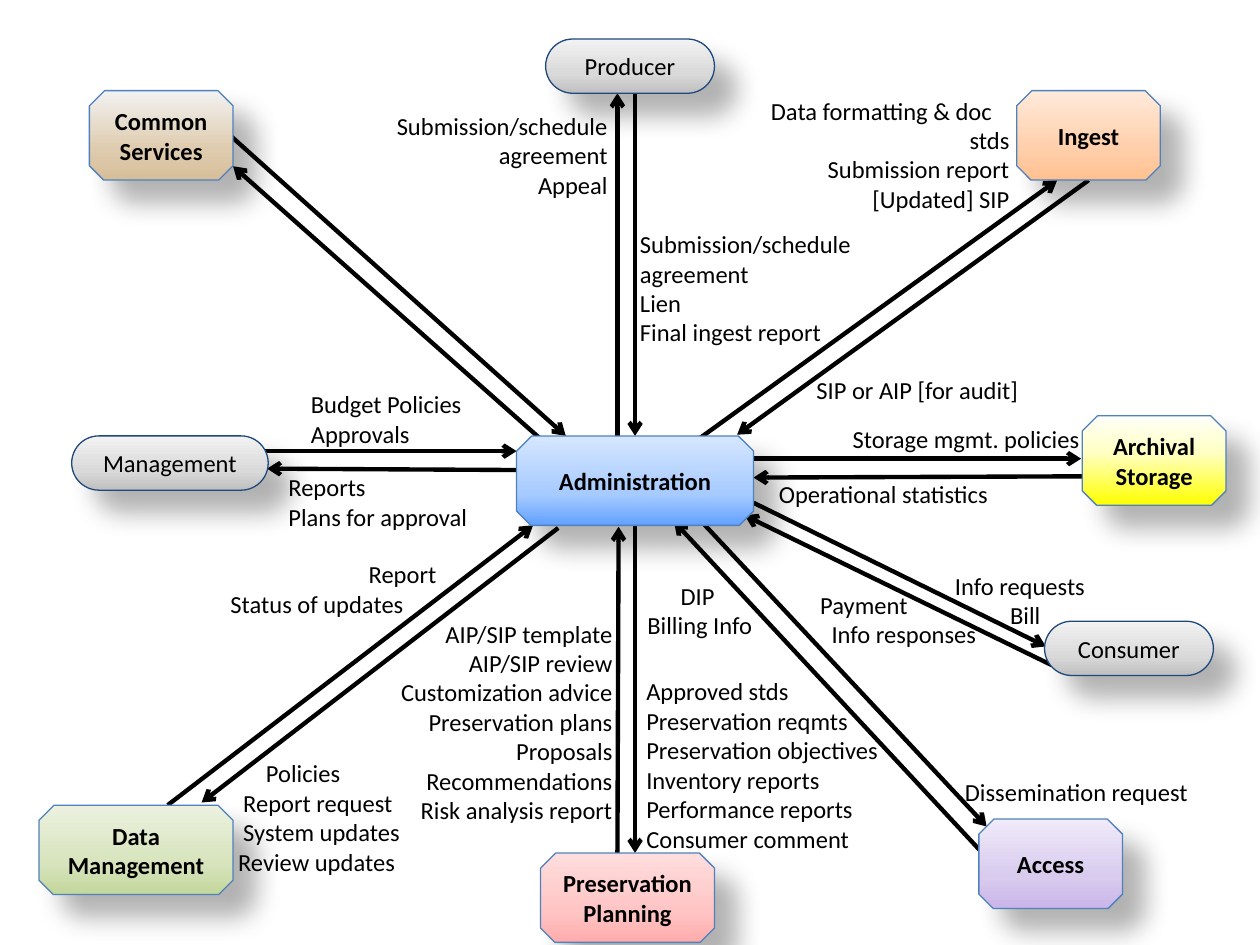
from copy import deepcopy

from pptx import Presentation
from pptx.dml.color import RGBColor
from pptx.enum.shapes import MSO_CONNECTOR, MSO_SHAPE
from pptx.enum.text import MSO_ANCHOR, MSO_AUTO_SIZE, PP_ALIGN
from pptx.oxml.ns import qn
from pptx.oxml.xmlchemy import OxmlElement
from pptx.util import Pt

LEFT, CENTER, RIGHT = PP_ALIGN.LEFT, PP_ALIGN.CENTER, PP_ALIGN.RIGHT
FONT = {"name": "Calibri", "size": Pt(14)}
BLACK = "000000"
LINE_HEIGHT = 16.9
PADDING = 7.2

ARROWS = [
    ((388.1, 284.4), (563.8, 472.3)),
    ((567.4, 493.9), (385.2, 298.1)),
    ((352.8, 249.1), (352.8, 53.3)),
    ((362.9, 53.3), (362.9, 249.1)),
    ((622.1, 103), (421.2, 248.4)),
    ((396.7, 252.7), (604.1, 103)),
    ((427.7, 262.1), (617.8, 262.1)),
    ((618.5, 272.2), (430.6, 272.9)),
    ((430.6, 287.3), (597.6, 369.4)),
    ((601.2, 380.2), (425.5, 294.5)),
    ((362.9, 296.6), (362.9, 487.4)),
    ((352.8, 491), (353.5, 301)),
    ((95.8, 460.1), (304.6, 300.2)),
    ((319, 301.7), (115.2, 458.6)),
    ((147.6, 257.8), (295.2, 257.8)),
    ((295.2, 268.6), (152.6, 267.8)),
    ((130.3, 76.3), (323.3, 249.1)),
    ((311.8, 253.4), (133.2, 95)),
]

# Each flow: left, top, width, line count, alignment, (text, indent) pairs
FLOWS = [
    (203.8, 59.8, 150.5, 3, RIGHT, [("Submission/schedule agreement", 0), ("Appeal", 0)]),
    (358.6, 127.4, 150.5, 4, LEFT,
     [("Submission/schedule agreement", 0), ("Lien", 0), ("Final ingest report", 0)]),
    (459.4, 211, 150.5, 1, LEFT, [("SIP or AIP [for audit]", 0)]),
    (433.4, 51.1, 150.5, 4, RIGHT,
     [("Data formatting & doc \tstds", 0), ("Submission report", 0), ("[Updated] SIP", 0)]),
    (170.6, 218.9, 126.7, 2, LEFT, [("Budget Policies", 0), ("Approvals", 0)]),
    (157.7, 266.4, 137.5, 2, LEFT, [("Reports", 0), ("Plans for approval", 0)]),
    (118.1, 316.1, 174.2, 2, LEFT, [("Report", 85.5), ("Status of updates", 6.5)]),
    (115.9, 429.8, 164.9, 4, LEFT,
     [("Policies", 29), ("Report request", 16), ("System updates", 16), ("Review updates", 13)]),
    (206.6, 349.9, 150.5, 7, RIGHT,
     [("AIP/SIP template", 0), ("AIP/SIP review", 0), ("Customization advice", 0),
      ("Preservation plans", 0), ("Proposals", 0), ("Recommendations", 0),
      ("Risk analysis report", 0)]),
    (362.9, 328.3, 89.3, 2, LEFT, [("DIP", 19), ("Billing Info", 0)]),
    (544.3, 440.6, 149, 1, LEFT, [("Dissemination request", 0)]),
    (424.1, 333.4, 185.8, 2, LEFT, [("Payment", 37.5), ("Info responses", 44)]),
    (538.6, 322.6, 149, 2, LEFT, [("Info requests", 0), ("Bill", 31.5)]),
    (422.6, 270, 149, 1, RIGHT, [("Operational statistics", 0)]),
    (480.2, 239, 149, 1, LEFT, [("Storage mgmt. policies", 0)]),
    (362.2, 383, 150.5, 6, LEFT,
     [("Approved stds", 0), ("Preservation reqmts", 0), ("Preservation objectives", 0),
      ("Inventory reports", 0), ("Performance reports", 0), ("Consumer comment", 0)]),
]

MODULES = [
    ("Access", 559.4, 468, 82.1, ("C9B5E8", "D8CBEE", "F0EAF9"), 0.35),
    ("Preservation Planning", 308.9, 487.4, 99.4, ("FFABAB", "FFC5C5", "FFDDDD"), 0.35),
    ("Archival Storage", 618.5, 237.6, 82.1, ("FFFF00", "FFFFC1", "FFFFFB"), 0.58),
    ("Data Management", 22.3, 460.1, 110.9, ("C3D69B", "D7E4BD", "EBF1DE"), 0.35),
    ("Common Services", 51.1, 51.8, 82.1, ("D6BE9A", "DFCCAF", "F2F2F2"), 0.35),
    ("Ingest", 581, 51.8, 82.1, ("FFC090", "FFCFAB", "FFEADA"), 0.35),
    ("Administration", 295.2, 249.1, 135.4, ("61A1FF", "A7CBFF", "D5E6FF"), 0.35),
]

ACTORS = [
    ("Consumer", 596.9, 355, 96.5),
    ("Producer", 311.8, 22.3, 96.5),
    ("Management", 41, 249.1, 112.3),
]
ACTOR_COLORS = ("BFBFBF", "D9D9D9", "F2F2F2")


def color(value):
    return RGBColor.from_string(value)


def add_element(parent, tag, **attributes):
    element = OxmlElement(tag)
    for name, value in attributes.items():
        element.set(name, str(value))
    parent.append(element)
    return element


def write(paragraph, text, alignment, **extra):
    paragraph.alignment = alignment
    run = paragraph.add_run()
    run.text = text
    for name, value in {**FONT, **extra}.items():
        setattr(run.font, name, value)
    run.font.color.rgb = color(BLACK)


def add_arrow(slide, start, end):
    arrow = slide.shapes.add_connector(
        MSO_CONNECTOR.STRAIGHT, *(Pt(value) for value in start + end))
    arrow.line.color.rgb = color(BLACK)
    arrow.line.width = Pt(2.5)
    add_element(arrow.line._get_or_add_ln(), "a:tailEnd", type="arrow")
    add_element(arrow._element.spPr, "a:effectLst")


def add_flow(slide, left, top, width, line_count, alignment, lines):
    height = PADDING + LINE_HEIGHT * line_count
    box = slide.shapes.add_textbox(Pt(left), Pt(top), Pt(width), Pt(height))
    frame = box.text_frame
    frame.word_wrap = True
    frame.auto_size = MSO_AUTO_SIZE.SHAPE_TO_FIT_TEXT
    for index, (text, indent) in enumerate(lines):
        paragraph = frame.add_paragraph() if index else frame.paragraphs[0]
        write(paragraph, text, alignment)
        if indent:
            paragraph._p.get_or_add_pPr().set("marL", str(Pt(indent)))


def add_node(slide, kind, adjustments, text, bounds, colors, middle, outline, bold):
    shape = slide.shapes.add_shape(kind, *(Pt(value) for value in bounds))
    for index, value in enumerate(adjustments):
        shape.adjustments[index] = value
    shape.fill.gradient()
    shape.fill.gradient_angle = 90
    properties = shape._element.spPr
    stop_list = properties.find(".//" + qn("a:gsLst"))
    stop_list.append(deepcopy(stop_list[-1]))
    for stop, value, position in zip(shape.fill.gradient_stops, colors, (0, middle, 1)):
        stop.color.rgb = color(value)
        stop.position = position
    shape.line.color.rgb = color(outline)
    shape.line.width = Pt(0.75)
    shape.shadow.inherit = False
    shadow = add_element(
        properties.find(qn("a:effectLst")), "a:outerShdw", blurRad=Pt(15), dist=Pt(18),
        dir=45 * 60000, algn="tl", rotWithShape=0)
    shadow_color = add_element(shadow, "a:srgbClr", val=BLACK)
    add_element(shadow_color, "a:alpha", val=30000)
    frame = shape.text_frame
    frame.word_wrap = True
    frame.vertical_anchor = MSO_ANCHOR.MIDDLE
    write(frame.paragraphs[0], text, CENTER, bold=bold)


def main():
    presentation = Presentation()
    presentation.slide_width, presentation.slide_height = Pt(720), Pt(540)
    slide = presentation.slides.add_slide(presentation.slide_layouts[6])
    for start, end in ARROWS:
        add_arrow(slide, start, end)
    for flow in FLOWS:
        add_flow(slide, *flow)
    for text, left, top, width, colors, middle in MODULES:
        add_node(slide, MSO_SHAPE.SNIP_2_SAME_RECTANGLE, (0.17, 0.16), text,
                 (left, top, width, 51.1), colors, middle, "4F81BD", True)
    for text, left, top, width in ACTORS:
        add_node(slide, MSO_SHAPE.ROUNDED_RECTANGLE, (0.5,), text,
                 (left, top, width, 31), ACTOR_COLORS, 0.35, "1F497D", False)
    presentation.save("out.pptx")


if __name__ == "__main__":
    main()
